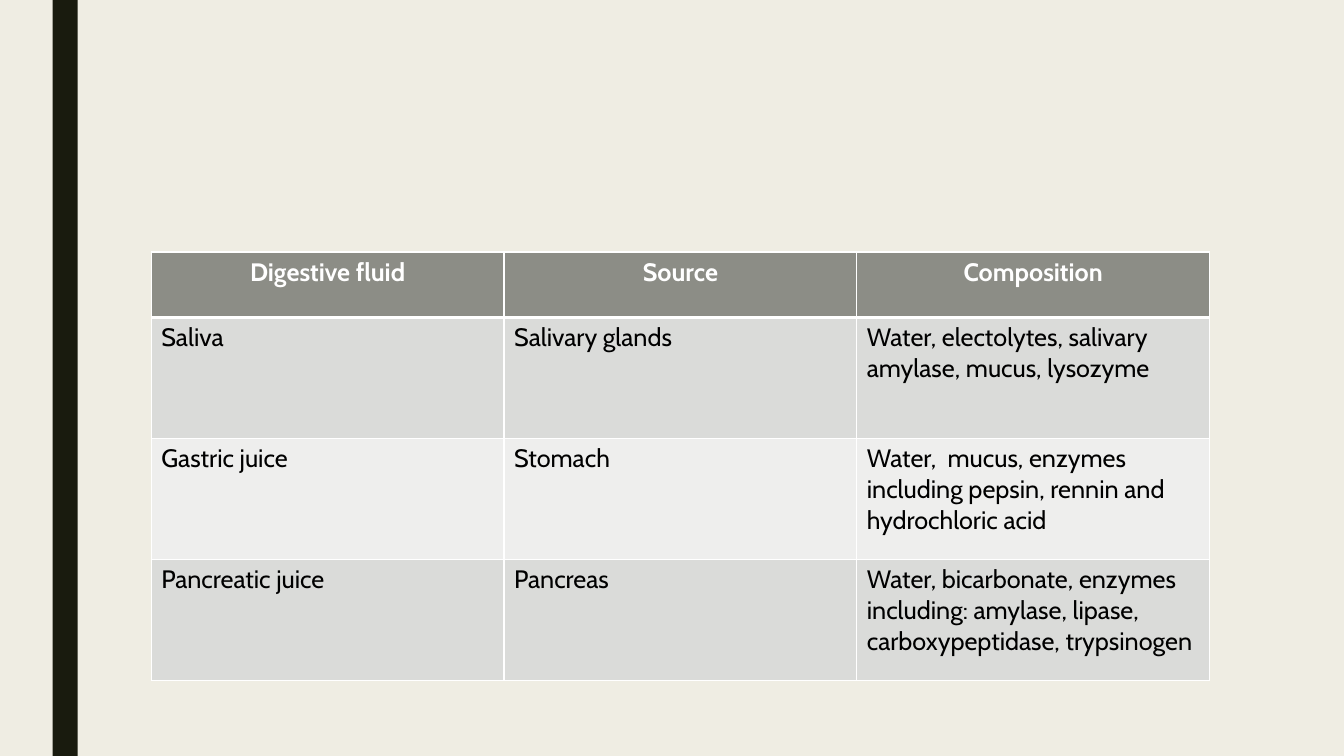
from dataclasses import dataclass

from lxml import etree
from pptx import Presentation
from pptx.dml.color import RGBColor
from pptx.enum.shapes import MSO_SHAPE
from pptx.enum.text import PP_ALIGN
from pptx.oxml.ns import qn
from pptx.util import Pt

RECT = MSO_SHAPE.RECTANGLE
CENTER, LEFT = PP_ALIGN.CENTER, PP_ALIGN.LEFT
FONT, TEXT_SIZE = "Cabin", 18
SLIDE_W, SLIDE_H = 960, 540
COLORS = {
    "background": "EFEDE3",
    "bar": "191B0E",
    "header": "8C8D86",
    "odd": "DADBD9",
    "even": "EEEEED",
    "border": "FFFFFF",
    "header_text": "FFFFFF",
    "body_text": "000000",
}


@dataclass(frozen=True)
class Fluid:
    name: str
    source: str
    composition: str


@dataclass(frozen=True)
class RowStyle:
    fill: str
    text: str
    bold: bool
    align: PP_ALIGN
    top: float
    bottom: float


HEADER = Fluid("Digestive fluid", "Source", "Composition")
FLUIDS = [
    Fluid("Saliva", "Salivary glands",
          "Water, electolytes, salivary amylase, mucus, lysozyme"),
    Fluid("Gastric juice", "Stomach",
          "Water,  mucus, enzymes including pepsin, rennin and hydrochloric acid"),
    Fluid("Pancreatic juice", "Pancreas",
          "Water, bicarbonate, enzymes including: amylase, lipase, "
          "carboxypeptidase, trypsinogen"),
]
COL_W, HEADER_H, ROW_H = 252, 46.8, 86.4


def rgb(name: str) -> RGBColor:
    return RGBColor.from_string(COLORS[name])


def row_style(row: int) -> RowStyle:
    if row == 0:
        return RowStyle("header", "header_text", True, CENTER, 1, 3)
    band = "odd" if row % 2 else "even"
    return RowStyle(band, "body_text", False, LEFT, 3 if row == 1 else 1, 1)


def set_borders(cell, widths: dict[str, float]) -> None:
    # Border lines must precede the fill in the cell properties
    tc_pr = cell._tc.get_or_add_tcPr()
    for i, (side, width) in enumerate(widths.items()):
        ln = etree.Element(qn(f"a:ln{side}"), w=str(int(Pt(width))))
        fill = etree.SubElement(ln, qn("a:solidFill"))
        etree.SubElement(fill, qn("a:srgbClr"), val=COLORS["border"])
        tc_pr.insert(i, ln)


def fill_cell(cell, text: str, style: RowStyle) -> None:
    cell.fill.solid()
    cell.fill.fore_color.rgb = rgb(style.fill)
    set_borders(cell, {"L": 1, "R": 1, "T": style.top, "B": style.bottom})
    p = cell.text_frame.paragraphs[0]
    p.alignment = style.align
    r = p.add_run()
    r.text = text
    r.font.name = FONT
    r.font.size = Pt(TEXT_SIZE)
    r.font.bold = style.bold
    r.font.color.rgb = rgb(style.text)


def add_side_bar(s) -> None:
    sp = s.shapes.add_shape(RECT, Pt(37.5), Pt(0), Pt(18), Pt(SLIDE_H))
    sp.shadow.inherit = False
    sp.fill.solid()
    sp.fill.fore_color.rgb = rgb("bar")
    sp.line.fill.background()


def add_fluid_table(s) -> None:
    rows = [HEADER, *FLUIDS]
    height = HEADER_H + ROW_H * len(FLUIDS)
    table = s.shapes.add_table(
        len(rows), 3, Pt(108), Pt(180), Pt(3 * COL_W), Pt(height)).table
    for column in table.columns:
        column.width = Pt(COL_W)
    for i, fluid in enumerate(rows):
        table.rows[i].height = Pt(ROW_H if i else HEADER_H)
        texts = (fluid.name, fluid.source, fluid.composition)
        for j, text in enumerate(texts):
            fill_cell(table.cell(i, j), text, row_style(i))


def main() -> None:
    prs = Presentation()
    prs.slide_width, prs.slide_height = Pt(SLIDE_W), Pt(SLIDE_H)
    s = prs.slides.add_slide(prs.slide_layouts[6])

    # Background and side bar
    s.background.fill.solid()
    s.background.fill.fore_color.rgb = rgb("background")
    add_side_bar(s)

    # Table of digestive fluids
    add_fluid_table(s)
    prs.save("out.pptx")


if __name__ == "__main__":
    main()
